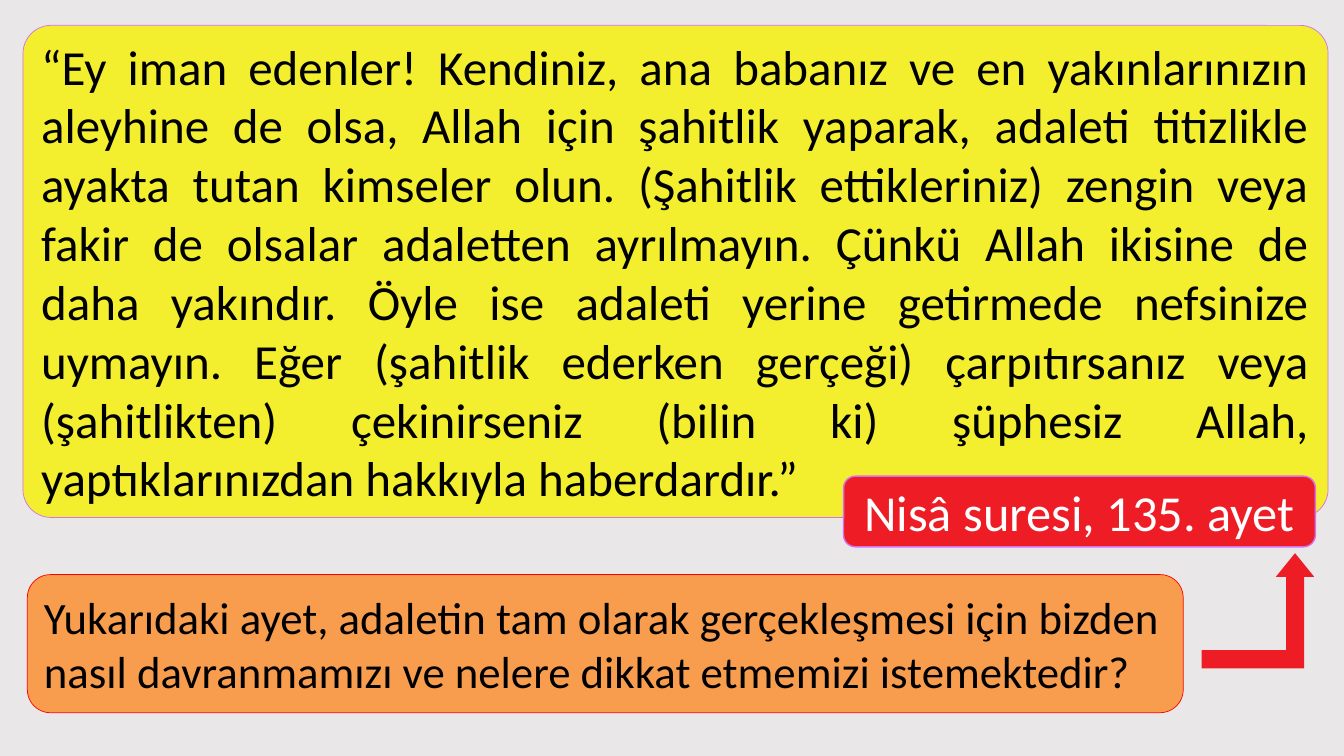
from dataclasses import dataclass

from pptx import Presentation
from pptx.dml.color import RGBColor
from pptx.enum.shapes import MSO_SHAPE
from pptx.enum.text import MSO_ANCHOR, PP_ALIGN
from pptx.util import Cm, Pt


@dataclass(frozen=True)
class Theme:
    font: str = "Calibri"
    background: str = "E9E7E7"
    yellow: str = "F3EE2E"
    red: str = "EE1C25"
    orange: str = "F89D4E"
    violet_line: str = "D471EF"
    red_line: str = "FF0000"
    dark_text: str = "000000"
    light_text: str = "FFFFFF"
    verse_size: int = 35
    reference_size: int = 36
    question_size: int = 32


THEME = Theme()

VERSE = (
    "“Ey iman edenler! Kendiniz, ana babanız ve en yakınlarınızın aleyhine de olsa, "
    "Allah için şahitlik yaparak, adaleti titizlikle ayakta tutan kimseler olun. "
    "(Şahitlik ettikleriniz) zengin veya fakir de olsalar adaletten ayrılmayın. "
    "Çünkü Allah ikisine de daha yakındır. Öyle ise adaleti yerine getirmede nefsinize "
    "uymayın. Eğer (şahitlik ederken gerçeği) çarpıtırsanız veya (şahitlikten) "
    "çekinirseniz (bilin ki) şüphesiz Allah, yaptıklarınızdan hakkıyla haberdardır.”"
)
REFERENCE = "Nisâ suresi, 135. ayet"
QUESTION = (
    "Yukarıdaki ayet, adaletin tam olarak gerçekleşmesi için bizden nasıl "
    "davranmamızı ve nelere dikkat etmemizi istemektedir?"
)


def color(value):
    return RGBColor.from_string(value)


def add_filled_shape(slide, kind, box, fill):
    shape = slide.shapes.add_shape(kind, *(Cm(length) for length in box))
    shape.shadow.inherit = False
    shape.fill.solid()
    shape.fill.fore_color.rgb = color(fill)
    return shape


def add_panel(slide, box, text, fill, line, line_width, size, text_color, align):
    panel = add_filled_shape(slide, MSO_SHAPE.ROUNDED_RECTANGLE, box, fill)
    panel.line.color.rgb = color(line)
    panel.line.width = Pt(line_width)
    frame = panel.text_frame
    frame.word_wrap = True
    frame.vertical_anchor = MSO_ANCHOR.MIDDLE
    frame.text = text
    para = frame.paragraphs[0]
    para.alignment = align
    span = para.runs[0]
    span.font.name = THEME.font
    span.font.size = Pt(size)
    span.font.color.rgb = color(text_color)
    return panel


# Verse with its reference overlapping the lower right corner
def add_verse(slide, box):
    left, top, width, height = box
    verse = add_panel(slide, box, VERSE, THEME.yellow, THEME.violet_line, 0.5,
                      THEME.verse_size, THEME.dark_text, PP_ALIGN.JUSTIFY)
    verse.adjustments[0] = 0.057
    reference_box = (left + width - 12.21, top + height - 1.04, 11.89, 1.78)
    add_panel(slide, reference_box, REFERENCE, THEME.red, THEME.violet_line, 1,
              THEME.reference_size, THEME.light_text, PP_ALIGN.CENTER)


# Question with an arrow leading up to the reference
def add_question(slide, box):
    left, top, width, _ = box
    add_panel(slide, box, QUESTION, THEME.orange, THEME.red_line, 0.5,
              THEME.question_size, THEME.dark_text, PP_ALIGN.LEFT)
    arrow_box = (left + width + 0.46, top - 0.54, 2.84, 2.9)
    arrow = add_filled_shape(slide, MSO_SHAPE.BENT_UP_ARROW, arrow_box, THEME.red)
    arrow.line.fill.background()
    for index, share in enumerate((0.16, 0.17, 0.21)):
        arrow.adjustments[index] = share


def main():
    deck = Presentation()
    deck.slide_width, deck.slide_height = Cm(33.87), Cm(19.05)
    page = deck.slides.add_slide(deck.slide_layouts[6])
    page.background.fill.solid()
    page.background.fill.fore_color.rgb = color(THEME.background)
    add_verse(page, (0.58, 0.64, 32.89, 12.4))
    add_question(page, (0.69, 14.48, 29.13, 3.48))
    deck.save("out.pptx")


if __name__ == "__main__":
    main()
